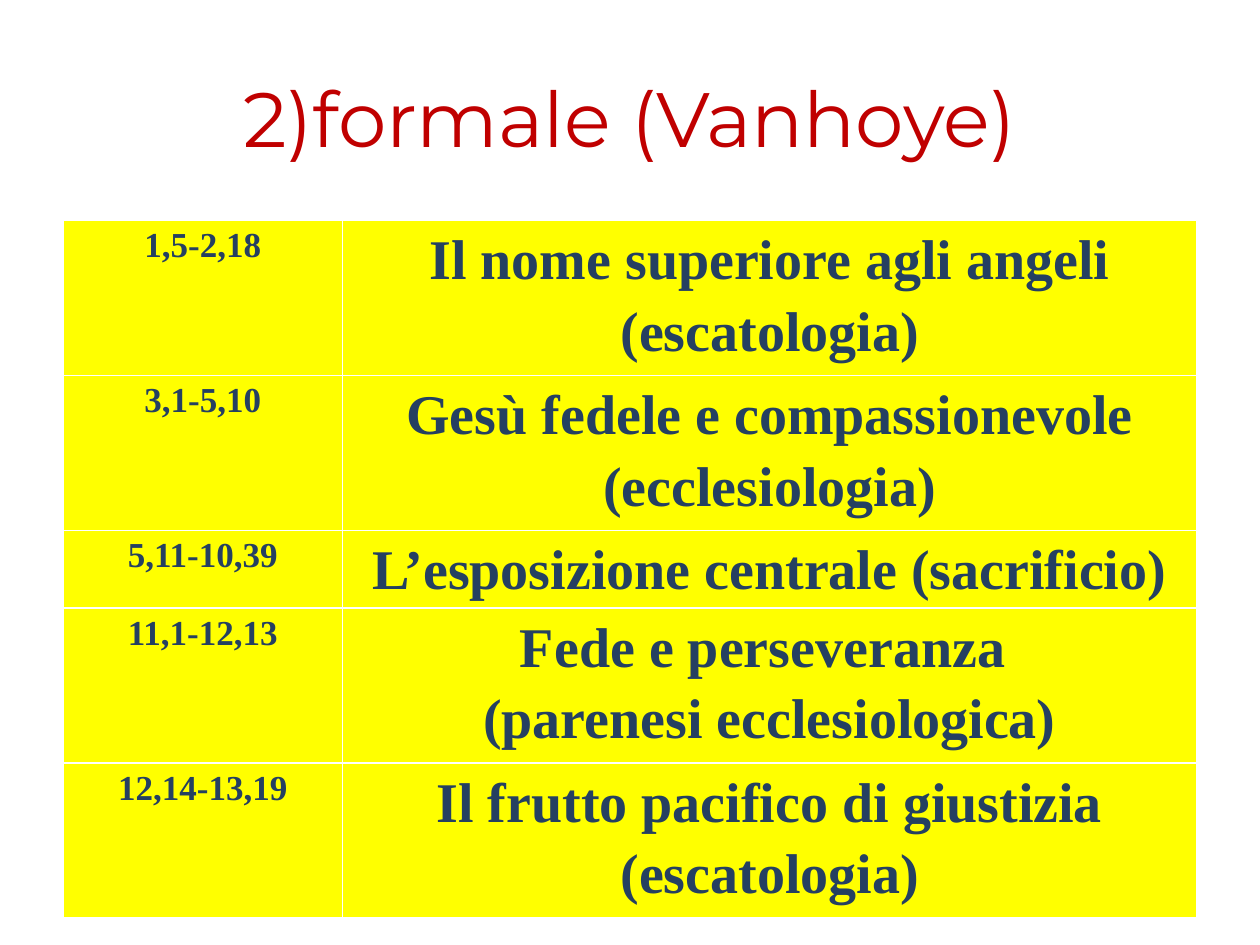
from dataclasses import dataclass

import pptx
import pptx.dml.color
import pptx.enum.text
import pptx.util

SLIDE_WIDTH, SLIDE_HEIGHT = 10, 7.5
MARGIN = SLIDE_WIDTH * 0.05
CONTENT_WIDTH = SLIDE_WIDTH - 2 * MARGIN
TITLE_TOP, TITLE_HEIGHT = SLIDE_HEIGHT * 0.04, 1.25
TABLE_TOP = 1.75
REFERENCE_WIDTH = 2.22
LINE_HEIGHT = 0.615  # height of one line of a section title

RED, NAVY, YELLOW = "C00000", "254061", "FFFF00"


@dataclass
class Section:
    verses: str
    title: list[str]
    lines: int = 2


SECTIONS = [
    Section("1,5-2,18", ["Il nome superiore agli angeli (escatologia)"]),
    Section("3,1-5,10", ["Gesù fedele e compassionevole (ecclesiologia)"]),
    Section("5,11-10,39", ["L’esposizione centrale (sacrificio)"], lines=1),
    Section("11,1-12,13", ["Fede e perseveranza ", "(parenesi ecclesiologica)"]),
    Section("12,14-13,19", ["Il frutto pacifico di giustizia (escatologia)"]),
]


def color(value: str) -> pptx.dml.color.RGBColor:
    return pptx.dml.color.RGBColor.from_string(value)


def write(frame, texts: list[str], size: float, font: str, ink: str,
          bold: bool = False, spacing: float = 1.0) -> None:
    """Fill a text frame with centred paragraphs in one style."""
    for index, text in enumerate(texts):
        para = frame.paragraphs[0] if index == 0 else frame.add_paragraph()
        para.text = text
        para.alignment = pptx.enum.text.PP_ALIGN.CENTER
        para.line_spacing = spacing
        para.font.size = pptx.util.Pt(size)
        para.font.name = font
        para.font.bold = bold
        para.font.color.rgb = color(ink)


def add_title(page, text: str) -> None:
    lengths = (MARGIN, TITLE_TOP, CONTENT_WIDTH, TITLE_HEIGHT)
    box = page.shapes.add_textbox(*map(pptx.util.Inches, lengths))
    box.text_frame.word_wrap = True
    box.text_frame.vertical_anchor = pptx.enum.text.MSO_ANCHOR.MIDDLE
    write(box.text_frame, [text], 44, "Montserrat", RED)


def fill_cell(cell, texts: list[str], size: float) -> None:
    cell.margin_left = cell.margin_right = pptx.util.Inches(0.07)
    cell.margin_top = cell.margin_bottom = 0
    cell.fill.solid()
    cell.fill.fore_color.rgb = color(YELLOW)
    write(cell.text_frame, texts, size, "Times New Roman", NAVY, True, 1.15)


def add_sections(page, sections: list[Section]) -> None:
    height = LINE_HEIGHT * sum(section.lines for section in sections)
    lengths = (MARGIN, TABLE_TOP, CONTENT_WIDTH, height)
    # The default table style supplies the white rules between the cells
    table = page.shapes.add_table(
        len(sections), 2, *map(pptx.util.Inches, lengths)).table
    table.columns[0].width = pptx.util.Inches(REFERENCE_WIDTH)
    table.columns[1].width = pptx.util.Inches(CONTENT_WIDTH - REFERENCE_WIDTH)
    for row, section in enumerate(sections):
        table.rows[row].height = pptx.util.Inches(LINE_HEIGHT * section.lines)
        fill_cell(table.cell(row, 0), [section.verses], 20)
        fill_cell(table.cell(row, 1), section.title, 32)


def main() -> None:
    deck = pptx.Presentation()
    deck.slide_width = pptx.util.Inches(SLIDE_WIDTH)
    deck.slide_height = pptx.util.Inches(SLIDE_HEIGHT)
    page = deck.slides.add_slide(deck.slide_layouts[6])
    add_title(page, "2)formale (Vanhoye)")
    add_sections(page, SECTIONS)
    deck.save("out.pptx")


if __name__ == "__main__":
    main()
